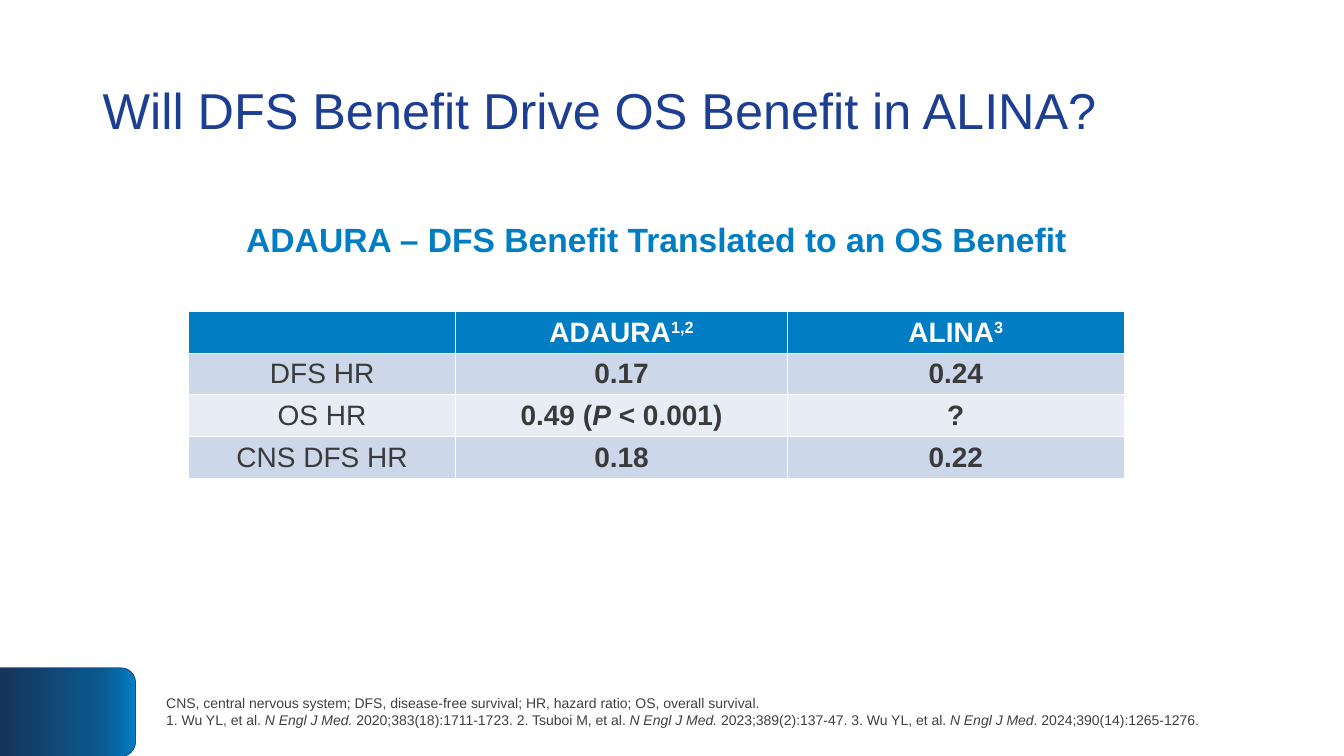
"""Build the slide comparing ADAURA and ALINA survival benefit."""
import copy
from dataclasses import dataclass

import lxml.etree
import pptx
import pptx.dml.color
import pptx.enum.shapes
import pptx.enum.text
import pptx.oxml
import pptx.oxml.ns
import pptx.util

Inches = pptx.util.Inches
Align = pptx.enum.text.PP_ALIGN
Anchor = pptx.enum.text.MSO_ANCHOR

COLORS = {
    "navy": "1C3F93",
    "blue": "007DC3",
    "mid_blue": "0B598F",
    "dark_blue": "15345A",
    "white": "FFFFFF",
    "footnote": "404040",
    "cell_text": "3A3A3A",
    "band_dark": "CCD7E9",
    "band_light": "E7ECF5",
}


@dataclass(frozen=True)
class Span:
    text: str
    italic: bool = False
    superscript: bool = False


@dataclass(frozen=True)
class TextBox:
    left: float
    top: float
    width: float
    height: float
    lines: list[list[Span]]
    size: int
    color: str
    bold: bool = False
    align: Align = Align.LEFT
    anchor: Anchor = Anchor.MIDDLE
    line_spacing: float = 1.0


JOURNAL = "N Engl J Med"
TEXT_BOXES = [
    TextBox(0.92, 0.4, 11.5, 1.45, [[Span("Will DFS Benefit Drive OS Benefit in ALINA?")]],
            36, "navy", line_spacing=0.9),
    TextBox(1.55, 6.62, 11.65, 0.88, [
        [Span("CNS, central nervous system; DFS, disease-free survival; "
              "HR, hazard ratio; OS, overall survival.")],
        [Span("1. Wu YL, et al. "), Span(JOURNAL + ". ", italic=True),
         Span("2020;383(18):1711-1723. 2. Tsuboi M, et al. "), Span(JOURNAL + ". ", italic=True),
         Span("2023;389(2):137-47. 3. Wu YL, et al. "), Span(JOURNAL, italic=True),
         Span(". 2024;390(14):1265-1276.")],
    ], 10, "footnote"),
    TextBox(1.87, 2.17, 9.28, 0.57, [[Span("ADAURA – DFS Benefit Translated to an OS Benefit")]],
            24, "blue", bold=True, align=Align.CENTER, anchor=Anchor.TOP, line_spacing=0.9),
]

COLUMN_WIDTHS = [2.65, 3.29, 3.34]
ROW_HEIGHT = 0.41
TABLE_ROWS = [
    [[], [Span("ADAURA"), Span("1,2", superscript=True)],
     [Span("ALINA"), Span("3", superscript=True)]],
    [[Span("DFS HR")], [Span("0.17")], [Span("0.24")]],
    [[Span("OS HR")], [Span("0.49 ("), Span("P", italic=True), Span(" < 0.001)")], [Span("?")]],
    [[Span("CNS DFS HR")], [Span("0.18")], [Span("0.22")]],
]


def rgb(name: str) -> pptx.dml.color.RGBColor:
    return pptx.dml.color.RGBColor.from_string(COLORS[name])


def write_text(text_frame, lines: list[list[Span]], *, size: int, color: str, bold: bool = False,
               align: Align = Align.LEFT, line_spacing: float = 1.0) -> None:
    for index, spans in enumerate(lines):
        paragraph = text_frame.add_paragraph() if index else text_frame.paragraphs[0]
        paragraph.alignment = align
        paragraph.line_spacing = line_spacing
        for span in spans:
            run = paragraph.add_run()
            run.text = span.text
            run.font.name = "Arial"
            run.font.size = pptx.util.Pt(size)
            run.font.bold = bold
            run.font.italic = span.italic
            run.font.color.rgb = rgb(color)
            if span.superscript:
                run._r.get_or_add_rPr().set("baseline", "30000")


def add_text_box(slide, box: TextBox) -> None:
    shape = slide.shapes.add_textbox(
        Inches(box.left), Inches(box.top), Inches(box.width), Inches(box.height))
    shape.text_frame.word_wrap = True
    shape.text_frame.vertical_anchor = box.anchor
    write_text(shape.text_frame, box.lines, size=box.size, color=box.color, bold=box.bold,
               align=box.align, line_spacing=box.line_spacing)


def add_corner_tab(slide) -> None:
    shape = slide.shapes.add_shape(
        pptx.enum.shapes.MSO_SHAPE.ROUND_2_SAME_RECTANGLE,
        Inches(0.23), Inches(6.39), Inches(0.88), Inches(1.35))
    shape.rotation = 90
    shape.shadow.inherit = False
    shape.line.color.rgb = rgb("navy")
    shape.line.width = pptx.util.Pt(0.5)
    shape.fill.gradient()
    shape.fill.gradient_angle = 270
    stop_list = shape._element.spPr.find(".//" + pptx.oxml.ns.qn("a:gsLst"))
    stop_list.insert(1, copy.deepcopy(stop_list[0]))
    stops = [(0, "blue"), (0.25, "mid_blue"), (1, "dark_blue")]
    for stop, (position, color) in zip(shape.fill.gradient_stops, stops):
        stop.position = position
        stop.color.rgb = rgb(color)


def add_cell_borders(cell) -> None:
    properties = cell._tc.get_or_add_tcPr()
    for index, side in enumerate(("lnL", "lnR", "lnT", "lnB")):
        border = lxml.etree.Element(pptx.oxml.ns.qn("a:" + side), w="12700")
        fill = lxml.etree.SubElement(border, pptx.oxml.ns.qn("a:solidFill"))
        lxml.etree.SubElement(fill, pptx.oxml.ns.qn("a:srgbClr"), val=COLORS["white"])
        properties.insert(index, border)


def add_hazard_table(slide) -> None:
    table = slide.shapes.add_table(
        len(TABLE_ROWS), len(COLUMN_WIDTHS), Inches(1.87), Inches(3.09),
        Inches(sum(COLUMN_WIDTHS)), Inches(ROW_HEIGHT * len(TABLE_ROWS))).table
    for column, width in zip(table.columns, COLUMN_WIDTHS):
        column.width = Inches(width)
    for row_index, row in enumerate(TABLE_ROWS):
        table.rows[row_index].height = Inches(ROW_HEIGHT)
        is_header = row_index == 0
        band = "blue" if is_header else "band_dark" if row_index % 2 else "band_light"
        for column_index, spans in enumerate(row):
            cell = table.cell(row_index, column_index)
            cell.margin_top = cell.margin_bottom = Inches(0.04)
            cell.vertical_anchor = Anchor.MIDDLE
            cell.fill.solid()
            cell.fill.fore_color.rgb = rgb(band)
            add_cell_borders(cell)
            write_text(cell.text_frame, [spans], size=20, bold=is_header or column_index > 0,
                       color="white" if is_header else "cell_text", align=Align.CENTER)


def main() -> None:
    presentation = pptx.Presentation()
    presentation.slide_width = Inches(13.33)
    presentation.slide_height = Inches(7.5)
    slide = presentation.slides.add_slide(presentation.slide_layouts[6])
    add_corner_tab(slide)
    for box in TEXT_BOXES:
        add_text_box(slide, box)
    add_hazard_table(slide)
    presentation.save("out.pptx")


if __name__ == "__main__":
    main()
